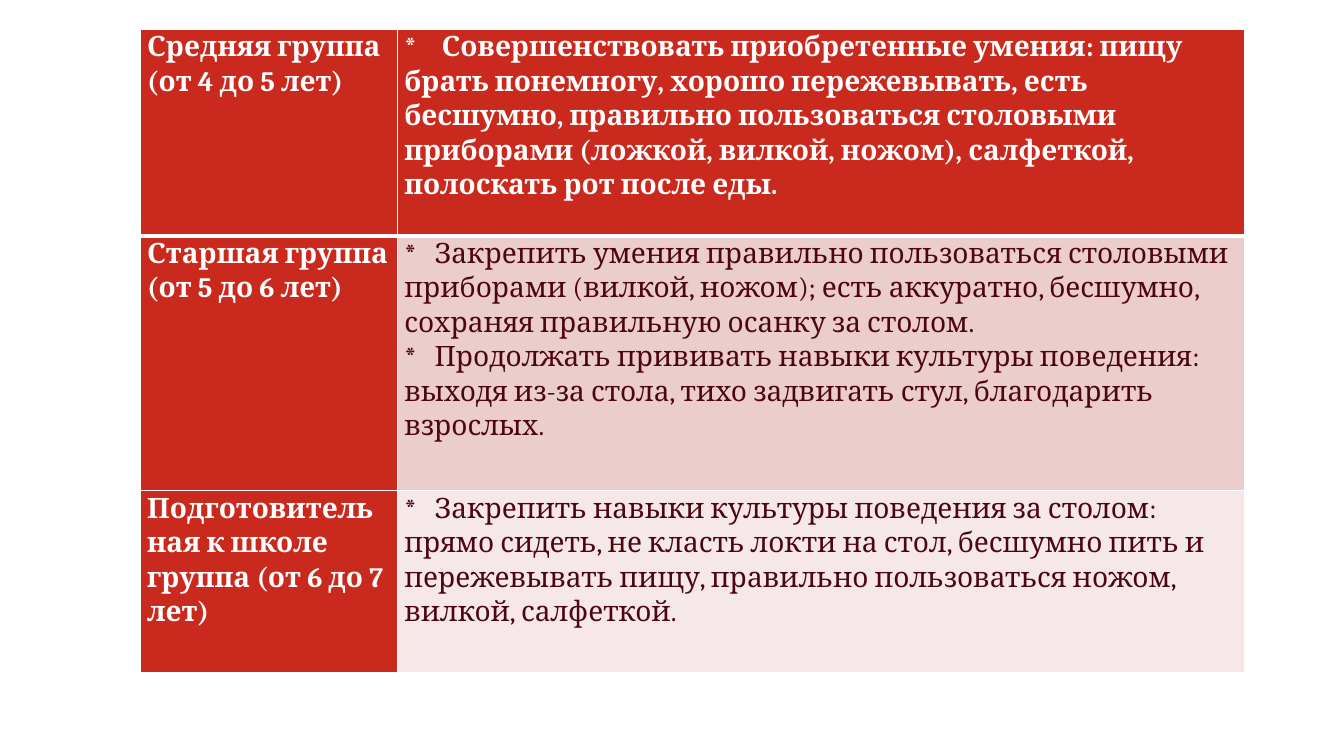
import pptx
import pptx.util
import pptx.dml.color
import pptx.oxml
from pptx.oxml.ns import qn
from lxml import etree


def color(hex_value):
    return pptx.dml.color.RGBColor.from_string(hex_value)


class Deck:
    FONT, SIZE, SPACING = "Cambria", 20, 1.07
    RED, DARK, WHITE = "CA2A1E", "4D0511", "FFFFFF"
    WIDTH, HEIGHT = 13.33, 7.5

    def __init__(self):
        self.prs = pptx.Presentation()
        self.prs.slide_width = pptx.util.Inches(self.WIDTH)
        self.prs.slide_height = pptx.util.Inches(self.HEIGHT)
        self.s = self.prs.slides.add_slide(self.prs.slide_layouts[6])

    def x(self, share):
        return round(self.prs.slide_width * share)

    def y(self, share):
        return round(self.prs.slide_height * share)

    def table(self, left, top, columns, rows):
        """Add a table; every length is a share of the slide."""
        frame = self.s.shapes.add_table(
            len(rows), len(columns), self.x(left), self.y(top),
            self.x(sum(columns)), self.y(sum(rows)))
        for column, share in zip(frame.table.columns, columns):
            column.width = self.x(share)
        for row, share in zip(frame.table.rows, rows):
            row.height = self.y(share)
        return frame.table

    def borders(self, cell, **widths):
        tcPr = cell._tc.get_or_add_tcPr()
        for side in "LRTB":
            ln = etree.SubElement(tcPr, qn(f"a:ln{side}"))
            ln.set("w", str(pptx.util.Pt(widths.get(side, 1))))
            fill = etree.SubElement(ln, qn("a:solidFill"))
            etree.SubElement(fill, qn("a:srgbClr")).set("val", self.WHITE)

    def tab_stop(self, p, inches):
        tabs = etree.SubElement(p._p.get_or_add_pPr(), qn("a:tabLst"))
        tab = etree.SubElement(tabs, qn("a:tab"))
        tab.set("pos", str(pptx.util.Inches(inches)))
        tab.set("algn", "l")

    def cell(self, cell, paragraphs, fill, ink, bold, tab=None, **widths):
        self.borders(cell, **widths)
        cell.fill.solid()
        cell.fill.fore_color.rgb = color(fill)
        cell.margin_left = cell.margin_right = pptx.util.Inches(0.07)
        cell.margin_top = cell.margin_bottom = 0
        tf = cell.text_frame
        for i, text in enumerate(paragraphs):
            p = tf.add_paragraph() if i else tf.paragraphs[0]
            if tab:
                self.tab_stop(p, tab)
            p.line_spacing = self.SPACING
            r = p.add_run()
            r.text = f"*\t{text}" if tab else text
            r.font.name = self.FONT
            r.font.size = pptx.util.Pt(self.SIZE)
            r.font.bold = bold
            r.font.color.rgb = color(ink)


# Age group, its goals, and the look of the goals cell
GROUPS = [
    ("Средняя группа (от 4 до 5 лет)",
     ["Совершенствовать приобретенные умения: пищу брать понемногу, хорошо "
      "пережевывать, есть бесшумно, правильно пользоваться столовыми приборами "
      "(ложкой, вилкой, ножом), салфеткой, полоскать рот после еды."],
     Deck.RED, Deck.WHITE, True, 0.37),
    ("Старшая группа (от 5 до 6 лет)",
     ["Закрепить умения правильно пользоваться столовыми приборами (вилкой, "
      "ножом); есть аккуратно, бесшумно, сохраняя правильную осанку за столом.",
      "Продолжать прививать навыки культуры поведения: выходя из-за стола, "
      "тихо задвигать стул, благодарить взрослых."],
     "ECCDCD", Deck.DARK, False, 0.3),
    ("Подготовительная к школе группа (от 6 до 7 лет)",
     ["Закрепить навыки культуры поведения за столом: прямо сидеть, не класть "
      "локти на стол, бесшумно пить и пережевывать пищу, правильно "
      "пользоваться ножом, вилкой, салфеткой."],
     "F6E8E8", Deck.DARK, False, 0.3),
]


def main():
    deck = Deck()
    w, h = deck.WIDTH, deck.HEIGHT
    table = deck.table(1.39 / w, 0.29 / h, [2.55 / w, 8.4 / w],
                       [2.05 / h, 2.53 / h, 1.8 / h])

    # One row per age group, with a thick rule under the first
    rules = [{"B": 3}, {"T": 3}, {}]
    for i, (group, goals, fill, ink, bold, tab) in enumerate(GROUPS):
        deck.cell(table.cell(i, 0), [group], deck.RED, deck.WHITE, True, **rules[i])
        deck.cell(table.cell(i, 1), goals, fill, ink, bold, tab, **rules[i])

    deck.prs.save("out.pptx")


if __name__ == "__main__":
    main()
